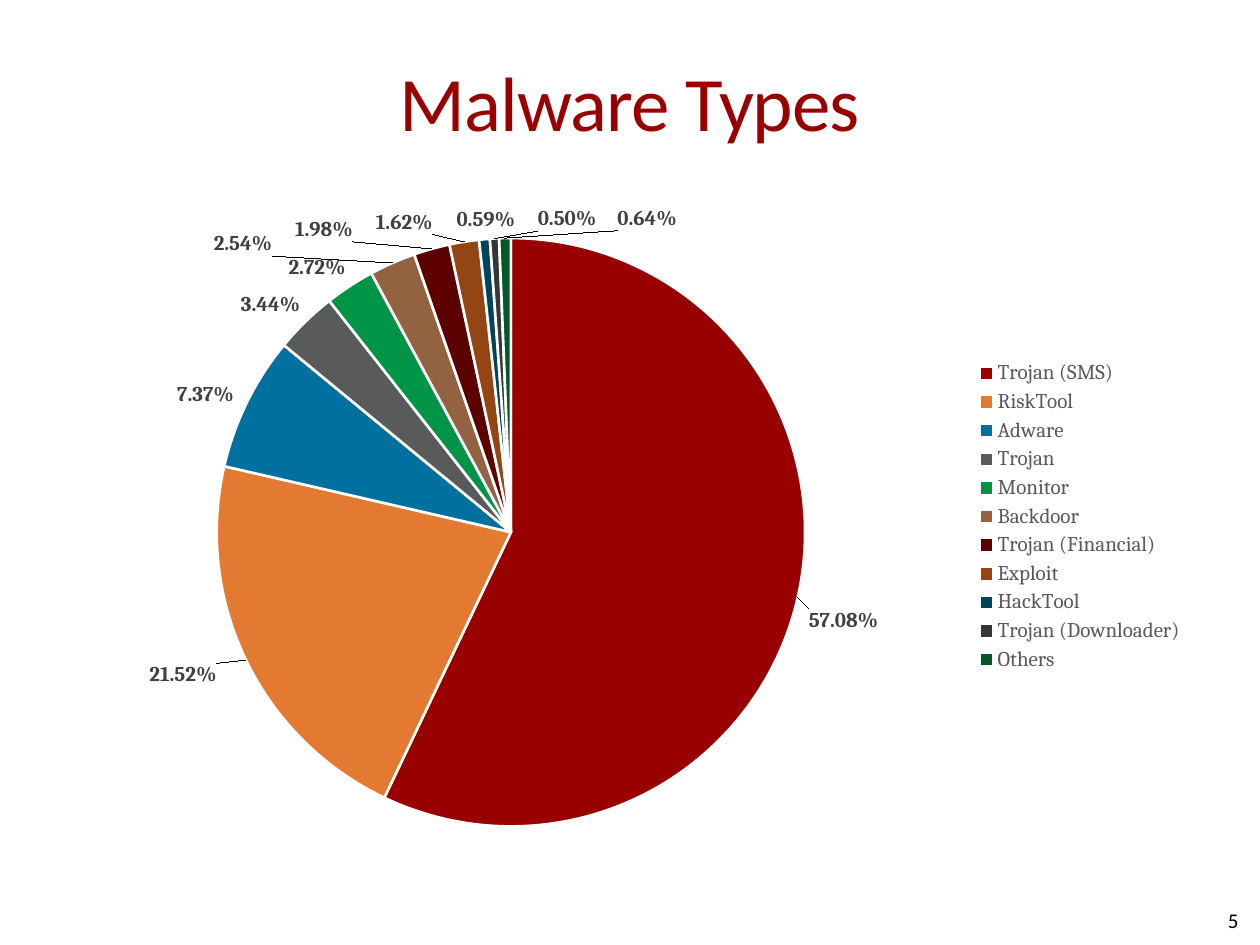
from copy import deepcopy

from lxml import etree
from pptx import Presentation
from pptx import util as u
from pptx.chart import data as chart_data
from pptx.dml import color
from pptx.enum import chart as chart_enum, text
from pptx.oxml import ns

COLUMNS, ROWS, CELL = 100, 75, 0.1
THEME = {
    "title": {"font": "Calibri", "size": 44, "color": "990000"},
    "number": {"font": "Calibri", "size": 12, "color": "000000"},
    "chart": {"font": "Cambria", "size": 10, "color": "000000"},
    "legend": {"font": "Cambria", "size": 12, "color": "595959"},
    "label": {"font": "Cambria", "size": 12, "color": "404040", "bold": True},
    "border": "FFFFFF",
}
TITLE = "Malware Types"
PAGE_NUMBER = "5"
MALWARE = [
    ("Trojan (SMS)", 57.08, "990000"),
    ("RiskTool", 21.52, "E47932"),
    ("Adware", 7.37, "00709E"),
    ("Trojan", 3.44, "595A5A"),
    ("Monitor", 2.72, "009446"),
    ("Backdoor", 2.54, "936241"),
    ("Trojan (Financial)", 1.98, "5C0000"),
    ("Exploit", 1.62, "934613"),
    ("HackTool", 0.59, "00435F"),
    ("Trojan (Downloader)", 0.5, "353636"),
    ("Others", 0.64, "00592A"),
]
LABEL_SHIFTS = {
    "Trojan (SMS)": (0.3, 0.8),
    "RiskTool": (-1.8, 0),
    "Adware": (-0.5, 0.6),
    "Backdoor": (-9.3, 0),
    "Trojan (Financial)": (-6.1, 0),
    "Exploit": (-2.4, 0),
    "HackTool": (2.5, 0),
    "Trojan (Downloader)": (5.8, 0),
    "Others": (11.3, 0),
}
BOXES = {
    "title": (5, 1.7, 90, 12.5),
    "number": (75, 71, 23.3, 4),
    "chart": (5, 15, 90, 52),
}
PIE_AREA = {"x": 12.2, "y": 3.9, "w": 46.7, "h": 46.7}


def place(name):
    return [u.Inches(cells * CELL) for cells in BOXES[name]]


def style_font(font, name):
    style = THEME[name]
    font.name = style["font"]
    font.size = u.Pt(style["size"])
    font.bold = style.get("bold", False)
    font.color.rgb = color.RGBColor.from_string(style["color"])


def add_text(slide, name, content, alignment):
    frame = slide.shapes.add_textbox(*place(name)).text_frame
    frame.word_wrap = True
    frame.vertical_anchor = text.MSO_ANCHOR.MIDDLE
    frame.margin_left = frame.margin_right = 0
    frame.margin_top = frame.margin_bottom = 0
    paragraph = frame.paragraphs[0]
    paragraph.alignment = alignment
    run = paragraph.add_run()
    run.text = content
    style_font(run.font, name)
    return run


def make_layout(cells, target=None):
    *_, width, height = BOXES["chart"]
    sides = {"x": width, "y": height, "w": width, "h": height}
    layout = etree.Element(ns.qn("c:layout"))
    manual = etree.SubElement(layout, ns.qn("c:manualLayout"))
    if target:
        etree.SubElement(manual, ns.qn("c:layoutTarget")).set("val", target)
        for mode in ("xMode", "yMode"):
            etree.SubElement(manual, ns.qn("c:" + mode)).set("val", "edge")
    for key, value in cells.items():
        share = etree.SubElement(manual, ns.qn("c:" + key))
        share.set("val", str(value / sides[key]))
    return layout


def shift_labels(labels):
    shared = [child for child in labels
              if child.tag != ns.qn("c:showLeaderLines")]
    names = [name for name, *_ in MALWARE]
    for position, (name, (x, y)) in enumerate(LABEL_SHIFTS.items()):
        label = etree.Element(ns.qn("c:dLbl"))
        index = etree.SubElement(label, ns.qn("c:idx"))
        index.set("val", str(names.index(name)))
        label.append(make_layout({"x": x, "y": y}))
        label.extend(deepcopy(child) for child in shared)
        labels.insert(position, label)


def add_pie(slide):
    data = chart_data.CategoryChartData()
    data.categories = [name for name, *_ in MALWARE]
    data.add_series("Series 1", [value for _, value, _ in MALWARE])
    chart = slide.shapes.add_chart(
        chart_enum.XL_CHART_TYPE.PIE, *place("chart"), data).chart
    style_font(chart.font, "chart")
    chart.has_title = False
    chart.has_legend = True
    chart.legend.position = chart_enum.XL_LEGEND_POSITION.RIGHT
    chart.legend.include_in_layout = False
    style_font(chart.legend.font, "legend")

    plot = chart.plots[0]
    plot.vary_by_categories = True
    series = plot.series[0]
    for index, (_, _, fill) in enumerate(MALWARE):
        form = series.points[index].format
        form.fill.solid()
        form.fill.fore_color.rgb = color.RGBColor.from_string(fill)
        form.line.color.rgb = color.RGBColor.from_string(THEME["border"])
        form.line.width = u.Pt(1.5)

    labels = series.data_labels
    labels.show_value = False
    labels.show_percentage = True
    labels.number_format = "0.00%"
    labels.number_format_is_linked = False
    labels.position = chart_enum.XL_LABEL_POSITION.OUTSIDE_END
    style_font(labels.font, "label")
    shift_labels(series._element.find(ns.qn("c:dLbls")))

    area = chart._chartSpace.find(".//" + ns.qn("c:plotArea"))
    for old in area.findall(ns.qn("c:layout")):
        area.remove(old)
    area.insert(0, make_layout(PIE_AREA, "inner"))


def main():
    presentation = Presentation()
    presentation.slide_width = u.Inches(COLUMNS * CELL)
    presentation.slide_height = u.Inches(ROWS * CELL)
    slide = presentation.slides.add_slide(presentation.slide_layouts[6])
    title = add_text(slide, "title", TITLE, text.PP_ALIGN.CENTER)
    title.font._element.set("spc", "-50")
    add_text(slide, "number", PAGE_NUMBER, text.PP_ALIGN.RIGHT)
    add_pie(slide)
    presentation.save("out.pptx")


if __name__ == "__main__":
    main()
